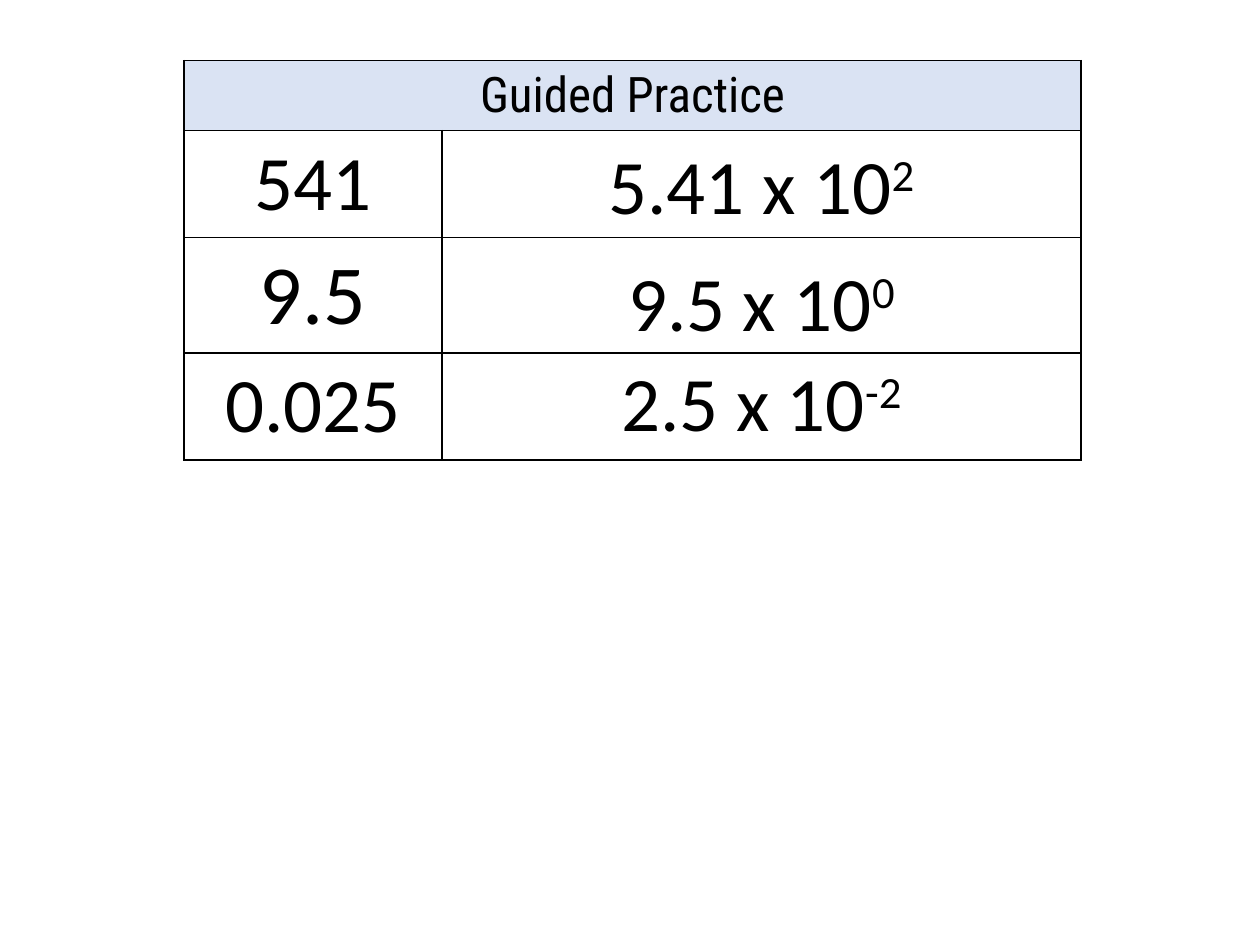
from lxml.etree import SubElement
from pptx import Presentation
from pptx.dml.color import RGBColor
from pptx.enum.text import MSO_ANCHOR as Anchor, PP_ALIGN as Align
from pptx.oxml.ns import qn
from pptx.util import Cm, Pt

COLORS = {"ink": "000000", "header": "DAE3F3"}
TABLE_BOX = (3.71, 1.22, 18.08, 8.05)  # left, top, width, height in cm
COLUMN_WIDTHS = (5.2, 12.88)
ROW_HEIGHTS = (1.41, 2.16, 2.32, 2.16)
# number, its size, coefficient, exponent, top of the answer below the table's top
PRACTICE = [
    ("541", 44, "5.41", "2", 1.73),
    ("9.5", 48, "9.5", "0", 4.09),
    ("0.025", 44, "2.5", "-2", 6.1),
]


def style_paragraph(para, size, font="Calibri"):
    para.alignment = Align.CENTER
    para.font.size = Pt(size)
    para.font.name = font
    para.font.color.rgb = RGBColor.from_string(COLORS["ink"])


def add_borders(cell):
    properties = cell._tc.get_or_add_tcPr()
    for side in ("a:lnL", "a:lnR", "a:lnT", "a:lnB"):
        line = SubElement(properties, qn(side), w=str(Pt(1)))
        fill = SubElement(line, qn("a:solidFill"))
        SubElement(fill, qn("a:srgbClr"), val=COLORS["ink"])


def fill_cell(cell, text, size, font="Calibri"):
    cell.text = text
    cell.vertical_anchor = Anchor.MIDDLE
    style_paragraph(cell.text_frame.paragraphs[0], size, font)


def add_practice_table(page, left, top, width, height):
    frame = page.shapes.add_table(len(ROW_HEIGHTS), len(COLUMN_WIDTHS),
                                  Cm(left), Cm(top), Cm(width), Cm(height))
    table = frame.table
    for column, column_width in zip(table.columns, COLUMN_WIDTHS):
        column.width = Cm(column_width)
    for row, row_height in zip(table.rows, ROW_HEIGHTS):
        row.height = Cm(row_height)
    for cell in table.iter_cells():
        add_borders(cell)
        cell.fill.background()

    # Header across both columns
    header = table.cell(0, 0)
    header.merge(table.cell(0, 1))
    header.fill.solid()
    header.fill.fore_color.rgb = RGBColor.from_string(COLORS["header"])
    fill_cell(header, "Guided Practice", 28, "Roboto Condensed")

    # Numbers in standard form
    for index, (number, size, *_) in enumerate(PRACTICE, start=1):
        fill_cell(table.cell(index, 0), number, size)


def add_answers(page, left, top, width, height):
    """Place each number in scientific notation over the right column."""
    answer_width = 11.96
    column_left = left + COLUMN_WIDTHS[0]
    answer_left = column_left + (left + width - column_left - answer_width) / 2
    for _, _, coefficient, exponent, offset in PRACTICE:
        box = page.shapes.add_textbox(Cm(answer_left), Cm(top + offset),
                                      Cm(answer_width), Cm(1.52))
        box.text_frame.word_wrap = True
        box.text_frame.vertical_anchor = Anchor.MIDDLE
        para = box.text_frame.paragraphs[0]
        style_paragraph(para, 44)
        para.add_run().text = f"{coefficient} x 10"
        span = para.add_run()
        span.text = exponent
        span.font._element.set("baseline", "30000")


def main():
    deck = Presentation()
    deck.slide_width, deck.slide_height = Cm(25.4), Cm(19.05)
    page = deck.slides.add_slide(deck.slide_layouts[6])
    add_practice_table(page, *TABLE_BOX)
    add_answers(page, *TABLE_BOX)
    deck.save("out.pptx")


if __name__ == "__main__":
    main()
